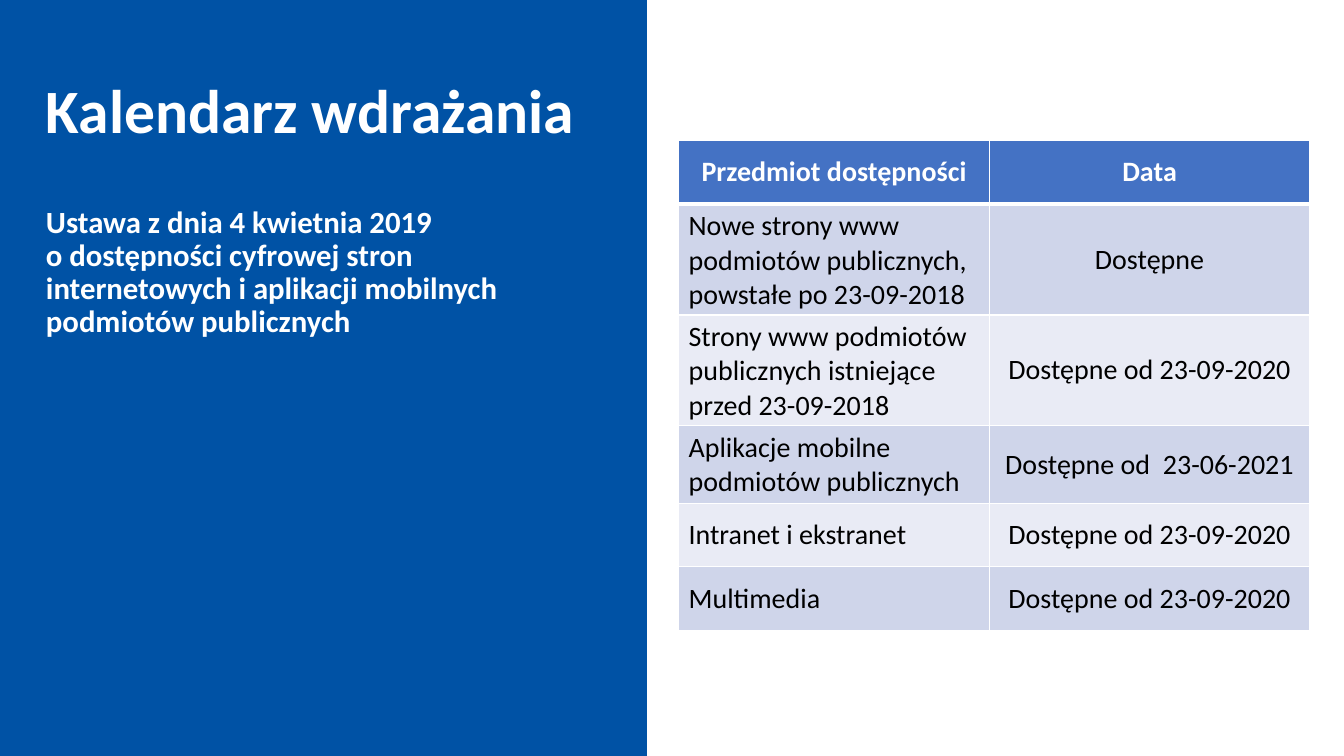
from dataclasses import dataclass

from lxml import etree
from pptx import Presentation
from pptx.dml.color import RGBColor
from pptx.enum import shapes, text
from pptx.oxml.ns import qn
from pptx.util import Cm, Pt

# Content
TITLE = "Kalendarz wdrażania"
LAW = ("Ustawa z dnia 4 kwietnia 2019\vo dostępności cyfrowej stron "
       "internetowych i aplikacji mobilnych podmiotów publicznych")
ROWS = [
    ("Przedmiot dostępności", "Data"),
    ("Nowe strony www podmiotów publicznych, powstałe po 23-09-2018", "Dostępne"),
    ("Strony www podmiotów publicznych istniejące przed 23-09-2018",
     "Dostępne od 23-09-2020"),
    ("Aplikacje mobilne podmiotów publicznych", "Dostępne od  23-06-2021"),
    ("Intranet i ekstranet", "Dostępne od 23-09-2020"),
    ("Multimedia", "Dostępne od 23-09-2020"),
]
WIDTHS = (7.84, 8.06)
HEIGHTS = (1.6, 2.26, 2.26, 1.6, 1.6, 1.6)


@dataclass(frozen=True)
class Theme:
    font: str = "Calibri"
    panel: str = "0052A5"
    head: str = "4472C4"
    bands: tuple = ("E9EBF5", "CFD5EA")
    white: str = "FFFFFF"
    black: str = "000000"
    title: int = 44
    body: int = 22
    cell: int = 20


T = Theme()


def color(code):
    return RGBColor.from_string(code)


def style(par, size, ink, bold):
    font = par.font
    font.name, font.size, font.bold = T.font, Pt(size), bold
    font.color.rgb = color(ink)


def label(slide, words, box, size, anchor):
    frame = slide.shapes.add_textbox(*map(Cm, box)).text_frame
    frame.word_wrap = True
    frame.vertical_anchor = anchor
    par = frame.paragraphs[0]
    par.text = words
    par.line_spacing = 0.9
    style(par, size, T.white, True)


def edge(cell, side, width):
    props = cell._tc.get_or_add_tcPr()
    line = etree.SubElement(props, qn("a:ln" + side), w=str(Pt(width)))
    fill = etree.SubElement(line, qn("a:solidFill"))
    etree.SubElement(fill, qn("a:srgbClr"), val=T.white)


def paint(cell, words, row, col):
    head = row == 0
    cell.text = words
    cell.vertical_anchor = text.MSO_ANCHOR.MIDDLE
    par = cell.text_frame.paragraphs[0]
    centred = head or col == 1
    par.alignment = text.PP_ALIGN.CENTER if centred else text.PP_ALIGN.LEFT
    style(par, T.cell, T.white if head else T.black, head)
    # The rule under the header is thicker than the rest
    for side in "LRTB":
        thick = (row, side) in ((0, "B"), (1, "T"))
        edge(cell, side, 3 if thick else 1)
    cell.fill.solid()
    cell.fill.fore_color.rgb = color(T.head if head else T.bands[row % 2])


def main():
    deck = Presentation()
    deck.slide_width, deck.slide_height = Cm(33.87), Cm(19.05)
    slide = deck.slides.add_slide(deck.slide_layouts[6])

    # Left panel
    panel = slide.shapes.add_shape(shapes.MSO_SHAPE.RECTANGLE,
                                   0, 0, Cm(16.28), deck.slide_height)
    panel.shadow.inherit = False
    panel.fill.solid()
    panel.fill.fore_color.rgb = color(T.panel)
    panel.line.color.rgb = color(T.panel)
    panel.line.width = Pt(1)

    # Title and act
    label(slide, TITLE, (0.91, 1.02, 14.45, 3.68), T.title, text.MSO_ANCHOR.MIDDLE)
    label(slide, LAW, (0.91, 5.08, 14.05, 10.39), T.body, text.MSO_ANCHOR.TOP)

    # Timetable
    grid = slide.shapes.add_table(len(ROWS), len(WIDTHS), Cm(17.1), Cm(3.54),
                                  Cm(sum(WIDTHS)), Cm(sum(HEIGHTS))).table
    for col, width in zip(grid.columns, WIDTHS):
        col.width = Cm(width)
    for row, height in zip(grid.rows, HEIGHTS):
        row.height = Cm(height)
    for r, row in enumerate(ROWS):
        for c, words in enumerate(row):
            paint(grid.cell(r, c), words, r, c)

    deck.save("out.pptx")


if __name__ == "__main__":
    main()
